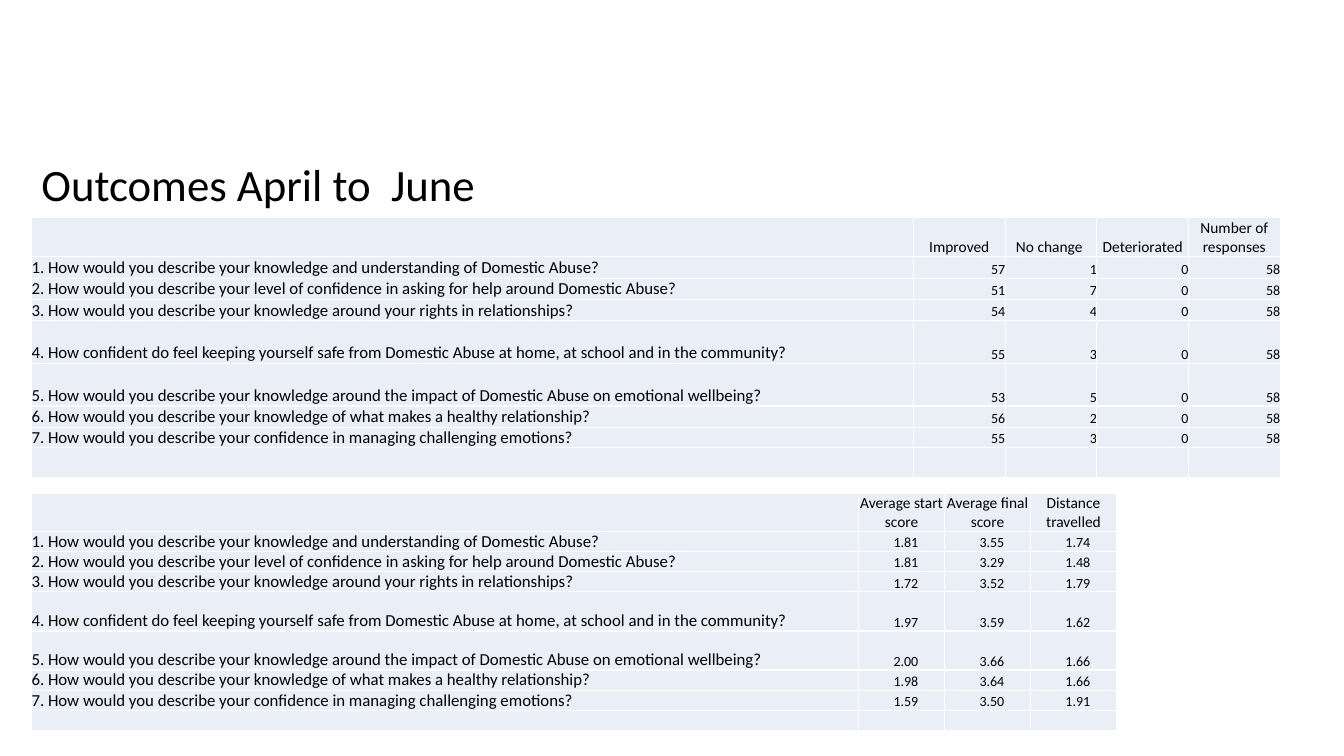
from pptx import Presentation
from pptx.dml.color import RGBColor
from pptx.enum import text as t
from pptx.oxml import parse_xml
from pptx.oxml.ns import nsdecls
from pptx.util import Pt

BLACK = RGBColor(0x00, 0x00, 0x00)
PALE_BLUE = RGBColor(0xEA, 0xEF, 0xF7)
BORDER = RGBColor(0xFF, 0xFF, 0xFF)
FONT = "Calibri"
LEFT = 22.5

QUESTIONS = [
    "1. How would you describe your knowledge and understanding of Domestic Abuse?",
    "2. How would you describe your level of confidence in asking for help around Domestic Abuse?",
    "3. How would you describe your knowledge around your rights in relationships?",
    "4. How confident do feel keeping yourself safe from Domestic Abuse at home, at school and in the community?",
    "5. How would you describe your knowledge around the impact of Domestic Abuse on emotional wellbeing?",
    "6. How would you describe your knowledge of what makes a healthy relationship?",
    "7. How would you describe your confidence in managing challenging emotions?",
]
RESPONSE_HEADS = ["Improved", "No change ", "Deteriorated", "Number of responses"]
RESPONSES = [(57, 1, 0, 58), (51, 7, 0, 58), (54, 4, 0, 58), (55, 3, 0, 58),
             (53, 5, 0, 58), (56, 2, 0, 58), (55, 3, 0, 58)]
SCORE_HEADS = ["Average start score", "Average final score", "Distance travelled"]
SCORES = [("1.81", "3.55", "1.74"), ("1.81", "3.29", "1.48"), ("1.72", "3.52", "1.79"),
          ("1.97", "3.59", "1.62"), ("2.00", "3.66", "1.66"), ("1.98", "3.64", "1.66"),
          ("1.59", "3.50", "1.91")]


def style_font(paragraph, size):
    font = paragraph.font
    font.name, font.size, font.color.rgb = FONT, Pt(size), BLACK


def add_borders(cell):
    properties = cell._tc.get_or_add_tcPr()
    for position, side in enumerate(("lnL", "lnR", "lnT", "lnB")):
        properties.insert(position, parse_xml(
            f'<a:{side} {nsdecls("a")} w="{Pt(1)}"><a:solidFill>'
            f'<a:srgbClr val="{BORDER}"/></a:solidFill></a:{side}>'))


def fill_cell(cell, content, size, align, indent=0):
    cell.fill.solid()
    cell.fill.fore_color.rgb = PALE_BLUE
    cell.margin_left = Pt(indent)
    cell.margin_right = cell.margin_top = cell.margin_bottom = 0
    cell.vertical_anchor = t.MSO_ANCHOR.BOTTOM
    paragraph = cell.text_frame.paragraphs[0]
    paragraph.alignment = align
    if content:
        paragraph.text = content
    else:
        # Keeps an empty cell from stretching its row
        paragraph._p.get_or_add_endParaRPr().set("sz", str(size * 100))
    style_font(paragraph, size)
    add_borders(cell)


def add_outcome_table(slide, top, heads, values, widths, heights, value_align, indent=0):
    rows = [["", *heads]]
    rows += [[question, *map(str, row)] for question, row in zip(QUESTIONS, values)]
    rows.append([""] * len(widths))
    table = slide.shapes.add_table(len(rows), len(widths), Pt(LEFT), Pt(top),
                                   Pt(sum(widths)), Pt(sum(heights))).table
    table.horz_banding = False
    for column, width in zip(table.columns, widths):
        column.width = Pt(width)
    for r, (row, height) in enumerate(zip(rows, heights)):
        table.rows[r].height = Pt(height)
        for c, content in enumerate(row):
            cell = table.cell(r, c)
            if r == 0:
                fill_cell(cell, content, 11, t.PP_ALIGN.CENTER)
            elif c == 0:
                fill_cell(cell, content, 12, t.PP_ALIGN.LEFT)
            else:
                fill_cell(cell, content, 10, value_align, indent)


def add_title(slide, wording):
    frame = slide.shapes.add_textbox(Pt(LEFT), Pt(108.6), Pt(556), Pt(46)).text_frame
    frame.word_wrap = True
    frame.auto_size = t.MSO_AUTO_SIZE.SHAPE_TO_FIT_TEXT
    frame.text = wording
    style_font(frame.paragraphs[0], 32)


def main():
    deck = Presentation()
    deck.slide_width, deck.slide_height = Pt(960), Pt(540)
    slide = deck.slides.add_slide(deck.slide_layouts[6])

    add_title(slide, "Outcomes April to  June")

    # How many responses improved, stayed or deteriorated
    add_outcome_table(slide, 155, RESPONSE_HEADS, RESPONSES, [630] + [65.5] * 4,
                      [28.5] + [15.2] * 3 + [30.5] * 2 + [15.2, 14.6, 21.3],
                      t.PP_ALIGN.RIGHT)

    # Average scores at start and end
    add_outcome_table(slide, 352.4, SCORE_HEADS, SCORES, [590.8] + [61.4] * 3,
                      [27] + [14] * 3 + [28] * 2 + [14] * 3,
                      t.PP_ALIGN.LEFT, indent=25)

    deck.save("out.pptx")


if __name__ == "__main__":
    main()
